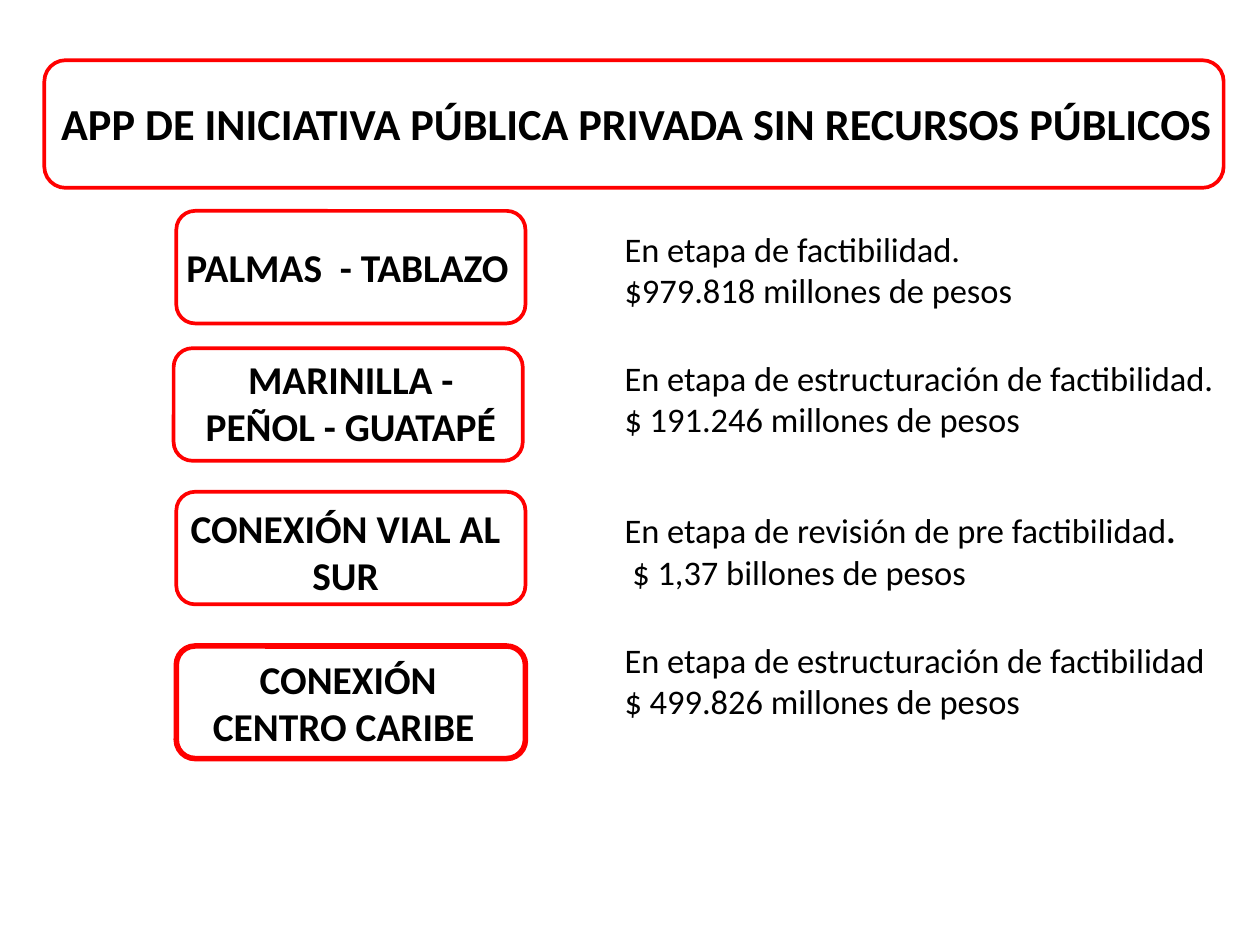
from dataclasses import dataclass

import pptx
import pptx.dml.color
import pptx.enum.shapes
import pptx.enum.text
import pptx.util

PX = 9144  # EMU per px, 100 px to the inch
COLORS = {"text": "000000", "frame": "FF0000"}
FONT = "Calibri"
ALIGN = pptx.enum.text.PP_ALIGN
FRAME_SIZE = (394, 127)
STATUS_LEFT = 695

Box = tuple[int, int, int, int]
Run = tuple[str, bool]


@dataclass(frozen=True)
class Project:
    name: str
    name_box: Box
    frame_at: tuple[int, int]
    status: list[list[Run]]
    status_box: Box
    frame_width: float = 3
    wrap_name: bool = True


PROJECTS = [
    Project("PALMAS  - TABLAZO", (199, 269, 387, 64), (199, 238),
            [[("En etapa de factibilidad.", False)],
             [("$979.818 millones de pesos", False)]],
            (STATUS_LEFT, 252, 542, 151), wrap_name=False),
    Project("MARINILLA - PEÑOL - GUATAPÉ", (217, 396, 358, 118), (196, 393),
            [[("En etapa de estructuración de factibilidad.", False)],
             [("$ 191.246 millones de pesos", False)]],
            (STATUS_LEFT, 398, 890, 151)),
    Project("CONEXIÓN VIAL AL SUR", (205, 564, 370, 118), (199, 555),
            [[("En etapa de revisión de pre factibilidad", False), (".", True)],
             [(" $ 1,37 billones de pesos", False)]],
            (STATUS_LEFT, 570, 711, 104)),
    Project("CONEXIÓN CENTRO CARIBE ", (220, 734, 346, 118), (199, 729),
            [[("En etapa de estructuración de factibilidad", False)],
             [("$ 499.826 millones de pesos", False)]],
            (STATUS_LEFT, 716, 711, 148), frame_width=4.5),
]


def emu(box: Box) -> list[int]:
    return [v * PX for v in box]


def color(name: str) -> pptx.dml.color.RGBColor:
    return pptx.dml.color.RGBColor.from_string(COLORS[name])


def add_text(s, box: Box, paragraphs: list[list[Run]], *, size: int,
             align: ALIGN, wrap: bool = True) -> None:
    """Add a text box; each paragraph is a list of (text, bold) runs."""
    tf = s.shapes.add_textbox(*emu(box)).text_frame
    tf.word_wrap = wrap
    for i, runs in enumerate(paragraphs):
        p = tf.add_paragraph() if i else tf.paragraphs[0]
        p.alignment = align
        for text, bold in runs:
            r = p.add_run()
            r.text = text
            r.font.name = FONT
            r.font.size = pptx.util.Pt(size)
            r.font.bold = bold
            r.font.color.rgb = color("text")


def add_frame(s, box: Box, width: float = 3) -> None:
    """Add an unfilled rounded outline."""
    sp = s.shapes.add_shape(
        pptx.enum.shapes.MSO_SHAPE.ROUNDED_RECTANGLE, *emu(box))
    sp.shadow.inherit = False
    sp.fill.background()
    sp.line.color.rgb = color("frame")
    sp.line.width = pptx.util.Pt(width)


def main() -> None:
    prs = pptx.Presentation()
    prs.slide_width, prs.slide_height = 1422 * PX, 1063 * PX
    s = prs.slides.add_slide(prs.slide_layouts[6])

    title = "APP DE INICIATIVA PÚBLICA PRIVADA SIN RECURSOS PÚBLICOS"
    add_text(s, (-14, 104, 1465, 71), [[(title, True)]],
             size=36, align=ALIGN.CENTER)
    add_frame(s, (50, 68, 1331, 144))

    for project in PROJECTS:
        add_text(s, project.name_box, [[(project.name, True)]], size=32,
                 align=ALIGN.CENTER, wrap=project.wrap_name)
        add_frame(s, project.frame_at + FRAME_SIZE, project.frame_width)
        add_text(s, project.status_box, project.status, size=28,
                 align=ALIGN.JUSTIFY)

    prs.save("out.pptx")


if __name__ == "__main__":
    main()
